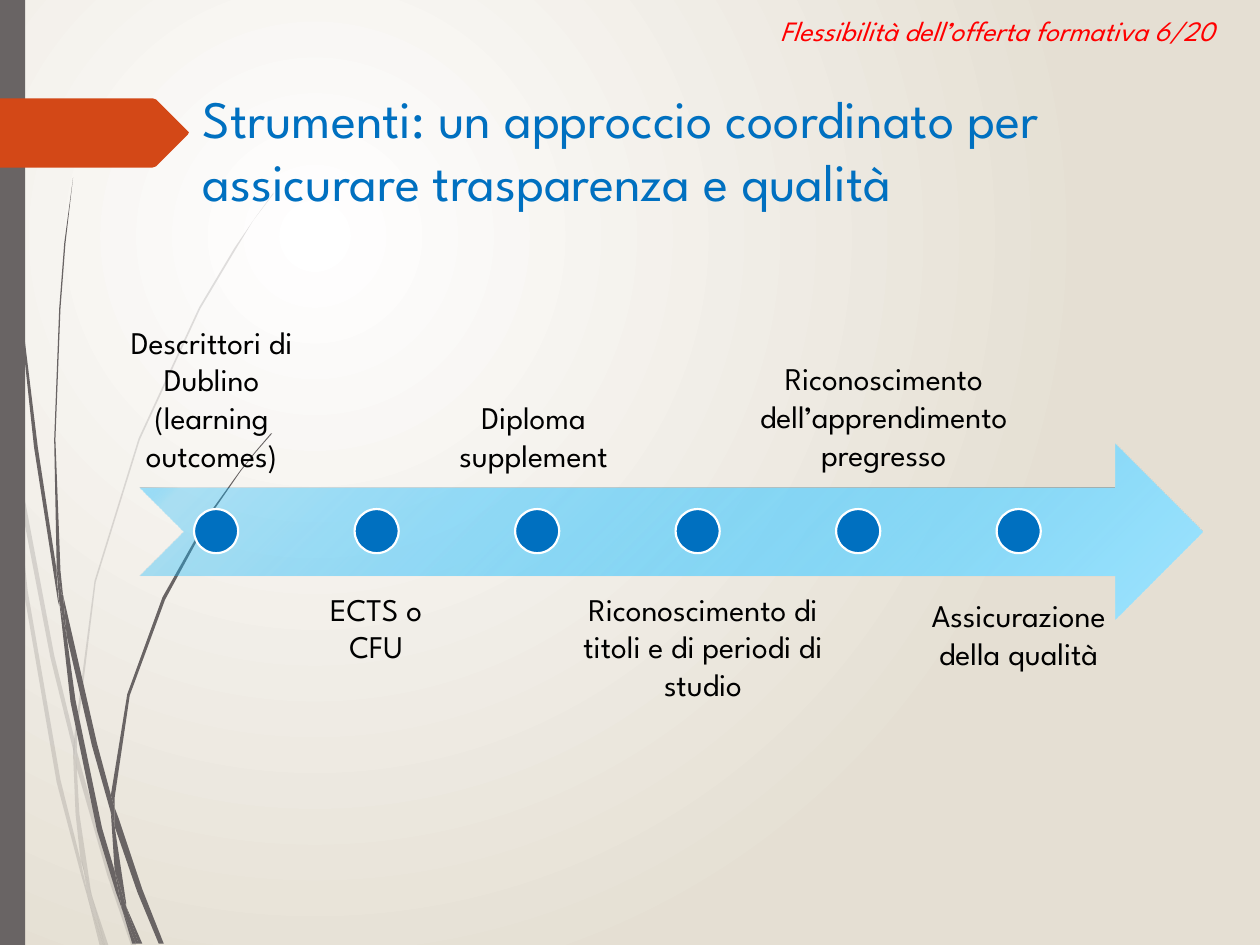
from lxml import etree
from pptx import Presentation
from pptx.dml.color import RGBColor
from pptx.enum.shapes import MSO_SHAPE
from pptx.enum.text import MSO_ANCHOR, PP_ALIGN
from pptx.oxml import parse_xml
from pptx.oxml.ns import nsdecls, qn
from pptx.util import Inches, Pt

ARROW = MSO_SHAPE.NOTCHED_RIGHT_ARROW
RECTANGLE = MSO_SHAPE.RECTANGLE
OVAL = MSO_SHAPE.OVAL
TOP, BOTTOM = MSO_ANCHOR.TOP, MSO_ANCHOR.BOTTOM
LEFT, CENTER, RIGHT = PP_ALIGN.LEFT, PP_ALIGN.CENTER, PP_ALIGN.RIGHT

FONT = "League Spartan"
COLORS = {
    "gray": "696464", "orange": "D34817", "blue": "0070C0", "red": "FF0000",
    "black": "000000", "white": "FFFFFF", "sand": "E5DFD3",
    "sky": "A0E5FF", "azure": "00B2FD", "ice": "E3F6FF",
}

PALE_STRANDS = [
    [(0.08, 3.5), (0.06, 3.22), (0, 2.82), (0, 2.99), (0.07, 3.44)],
    [(0.4, 5.22), (0.59, 5.99), (0.59, 5.86), (0.43, 5.2), (0.1, 3.45), (0.12, 3.76)],
    [(0.64, 6.07), (0.61, 5.96), (0.61, 6.1), (0.85, 6.94), (1.04, 7.5), (1.08, 7.5),
     (0.88, 6.92)],
    [(0.83, 7.5), (0.86, 7.5), (0.73, 7.11)],
    [(0.64, 6.83), (0.48, 6.19), (0.22, 4.69), (0.12, 3.76), (0.08, 3.5), (0.19, 4.7),
     (0.45, 6.21), (0.64, 6.93), (0.7, 7.14), (0.69, 7.07)],
    [(0.58, 5.99), (0.6, 6.46), (0.64, 6.83), (0.67, 6.92), (0.73, 7.11), (0.72, 7.06),
     (0.63, 6.46), (0.61, 6.1), (0.61, 6.08)],
    [(0.61, 5.84), (0.76, 4.62), (1.11, 3.49), (1.59, 2.45), (1.87, 1.98), (2.01, 1.75),
     (2.17, 1.54), (2.17, 1.53), (2.01, 1.75), (1.86, 1.97), (1.58, 2.44), (1.1, 3.48),
     (0.75, 4.61), (0.59, 5.84), (0.59, 5.86), (0.61, 5.96)],
    [(0.7, 7.14), (0.79, 7.5), (0.82, 7.5)],
    [(0.61, 6.08), (0.61, 6.1), (0.61, 5.96), (0.59, 5.86), (0.58, 5.99)],
    [(0.67, 6.92), (0.65, 6.83), (0.69, 7.07), (0.7, 7.14), (0.82, 7.5), (0.83, 7.5),
     (0.73, 7.11)],
]
DARK_STRANDS = [
    [(0.05, 1.1), (0.14, 2.33), (0.27, 3.55), (0.46, 4.77), (0.47, 4.81), (0.45, 4.57),
     (0.45, 4.53), (0.3, 3.55), (0.15, 2.32), (0.06, 1.09), (0.04, 0.48), (0.03, 0),
     (0.02, 0), (0.03, 0.48)],
    [(0.73, 5.92), (0.88, 6.45), (0.88, 6.33), (0.88, 6.31), (0.77, 5.9), (0.5, 4.72),
     (0.53, 5.05)],
    [(0.94, 6.49), (0.91, 6.41), (0.91, 6.56), (1.09, 7.08), (1.26, 7.49), (1.3, 7.49),
     (1.13, 7.06)],
    [(0.91, 6.91), (0.81, 6.57), (0.6, 5.56), (0.53, 5.05), (0.47, 4.77), (0.56, 5.57),
     (0.77, 6.59), (0.92, 7.08), (0.97, 7.22), (0.96, 7.17)],
    [(0.5, 4.72), (0.48, 4.53), (0.44, 3.49), (0.48, 2.45), (0.52, 1.93), (0.58, 1.41),
     (0.51, 1.93), (0.47, 2.45), (0.43, 3.49), (0.45, 4.49), (0.49, 4.72)],
    [(1.1, 7.49), (1.13, 7.49), (1, 7.19)],
    [(0.47, 4.77), (0.53, 5.05), (0.5, 4.72), (0.49, 4.72), (0.45, 4.49), (0.45, 4.53)],
    [(0.91, 6.33), (1.03, 5.52), (1.31, 4.76), (1.69, 4.06), (1.91, 3.74), (2.03, 3.59),
     (2.16, 3.44), (2.15, 3.44), (2.03, 3.58), (1.91, 3.73), (1.68, 4.05), (1.29, 4.74),
     (1.01, 5.51), (0.88, 6.31), (0.91, 6.41)],
    [(0.97, 7.22), (1.05, 7.49), (1.08, 7.49)],
    [(0.88, 6.45), (0.91, 6.91), (0.96, 7.06), (1, 7.19), (1, 7.16), (0.91, 6.56),
     (0.9, 6.51)],
    [(0.88, 6.45), (0.9, 6.51), (0.91, 6.56), (0.91, 6.41), (0.88, 6.31), (0.88, 6.33)],
    [(0.96, 7.06), (0.91, 6.91), (0.96, 7.17), (0.97, 7.22), (1.08, 7.49), (1.1, 7.49),
     (1, 7.19)],
]
TITLE_FLAG = [
    (0, 0.78), (1.21, 0.78), (1.24, 0.79), (1.49, 1.04), (1.5, 1.05), (1.49, 1.07),
    (1.24, 1.32), (1.21, 1.33), (0, 1.33),
]
MILESTONES = [
    ("Descrittori di Dublino (learning outcomes)", (0.8, 2.27, 1.76, 1.6), BOTTOM),
    ("ECTS o CFU", (2.38, 4.57, 1.21, 1.4), TOP),
    ("Diploma supplement", (3.38, 2.47, 1.71, 1.4), BOTTOM),
    ("Riconoscimento di titoli e di periodi di studio", (4.47, 4.57, 2.22, 1.65), TOP),
    ("Riconoscimento dell’apprendimento pregresso", (5.68, 2.21, 2.67, 1.65), BOTTOM),
    ("Assicurazione della qualità", (7.12, 4.62, 1.93, 1.4), TOP),
]
FIRST_DOT, LAST_DOT, DOT_TOP, DOT_SIZE = 1.54, 7.91, 4.04, 0.35


def color(name):
    return RGBColor.from_string(COLORS[name])


class SlideBuilder:
    def __init__(self, slide):
        self.slide = slide

    def gradient(self, fill, element, stops, direction):
        fill.gradient()
        old = element.find(".//" + qn("a:gradFill"))
        stop_xml = "".join(
            f'<a:gs pos="{position * 1000}"><a:srgbClr val="{COLORS[name]}">'
            f'<a:alpha val="{alpha * 1000}"/></a:srgbClr></a:gs>'
            for position, name, alpha in stops
        )
        new = parse_xml(
            f'<a:gradFill {nsdecls("a")} rotWithShape="1">'
            f"<a:gsLst>{stop_xml}</a:gsLst>{direction}</a:gradFill>"
        )
        old.getparent().replace(old, new)

    def background(self, stops, direction):
        self.gradient(self.slide.background.fill, self.slide.element, stops, direction)

    def paint(self, shape, fill, alpha=100):
        shape.shadow.inherit = False
        shape.line.fill.background()
        shape.fill.solid()
        shape.fill.fore_color.rgb = color(fill)
        if alpha < 100:
            target = shape.element.spPr.find(".//" + qn("a:srgbClr"))
            etree.SubElement(target, qn("a:alpha")).set("val", str(alpha * 1000))

    def outline(self, points, fill, alpha=100):
        start, *others = [(Inches(x), Inches(y)) for x, y in points]
        builder = self.slide.shapes.build_freeform(*start)
        builder.add_line_segments(others, close=True)
        self.paint(builder.convert_to_shape(), fill, alpha)

    def shape(self, kind, box, fill):
        shape = self.slide.shapes.add_shape(kind, *map(Inches, box))
        self.paint(shape, fill)
        return shape

    def dot(self, left):
        shape = self.shape(OVAL, (left, DOT_TOP, DOT_SIZE, DOT_SIZE), "blue")
        shape.line.color.rgb = color("white")
        shape.line.width = Pt(1.25)

    def arrow(self, box, stops, direction):
        shape = self.shape(ARROW, box, "sky")
        self.gradient(shape.fill, shape.element, stops, direction)

    def text(self, text, box, size, fill, align=LEFT, anchor=TOP, inset=None, italic=False):
        frame = self.slide.shapes.add_textbox(*map(Inches, box)).text_frame
        frame.word_wrap = True
        frame.vertical_anchor = anchor
        if inset is not None:
            frame.margin_left = frame.margin_right = Inches(inset)
            frame.margin_top = frame.margin_bottom = Inches(inset)
        paragraph = frame.paragraphs[0]
        paragraph.text = text
        paragraph.alignment = align
        paragraph.font.name = FONT
        paragraph.font.size = Pt(size)
        paragraph.font.italic = italic
        paragraph.font.color.rgb = color(fill)


def main():
    presentation = Presentation()
    presentation.slide_width, presentation.slide_height = Inches(10), Inches(7.5)
    builder = SlideBuilder(presentation.slides.add_slide(presentation.slide_layouts[6]))

    builder.background(
        [(0, "white", 100), (100, "sand", 100)],
        '<a:path path="circle"><a:fillToRect l="50000" t="50000" r="100000" b="100000"/></a:path>',
    )
    for points in PALE_STRANDS:
        builder.outline(points, "gray", 20)
    for points in DARK_STRANDS:
        builder.outline(points, "gray")
    builder.shape(RECTANGLE, (0, 0, 0.2, 7.5), "gray")
    builder.outline(TITLE_FLAG, "orange")

    builder.text("Strumenti: un approccio coordinato per assicurare trasparenza e qualità",
                 (1.51, 0.63, 8.23, 1.17), 30, "blue")
    builder.arrow((1.11, 3.52, 8.43, 1.4),
                  [(0, "sky", 100), (93, "azure", 30), (100, "ice", 100)],
                  '<a:lin ang="13500000" scaled="0"/>')
    step = (LAST_DOT - FIRST_DOT) / (len(MILESTONES) - 1)
    for index, (label, box, anchor) in enumerate(MILESTONES):
        builder.text(label, box, 18, "black", CENTER, anchor, inset=0.11)
        builder.dot(FIRST_DOT + index * step)
    builder.text("Flessibilità dell’offerta formativa 6/20", (1.73, 0.06, 8.01, 0.37),
                 16, "red", RIGHT, italic=True)

    presentation.save("out.pptx")


if __name__ == "__main__":
    main()
